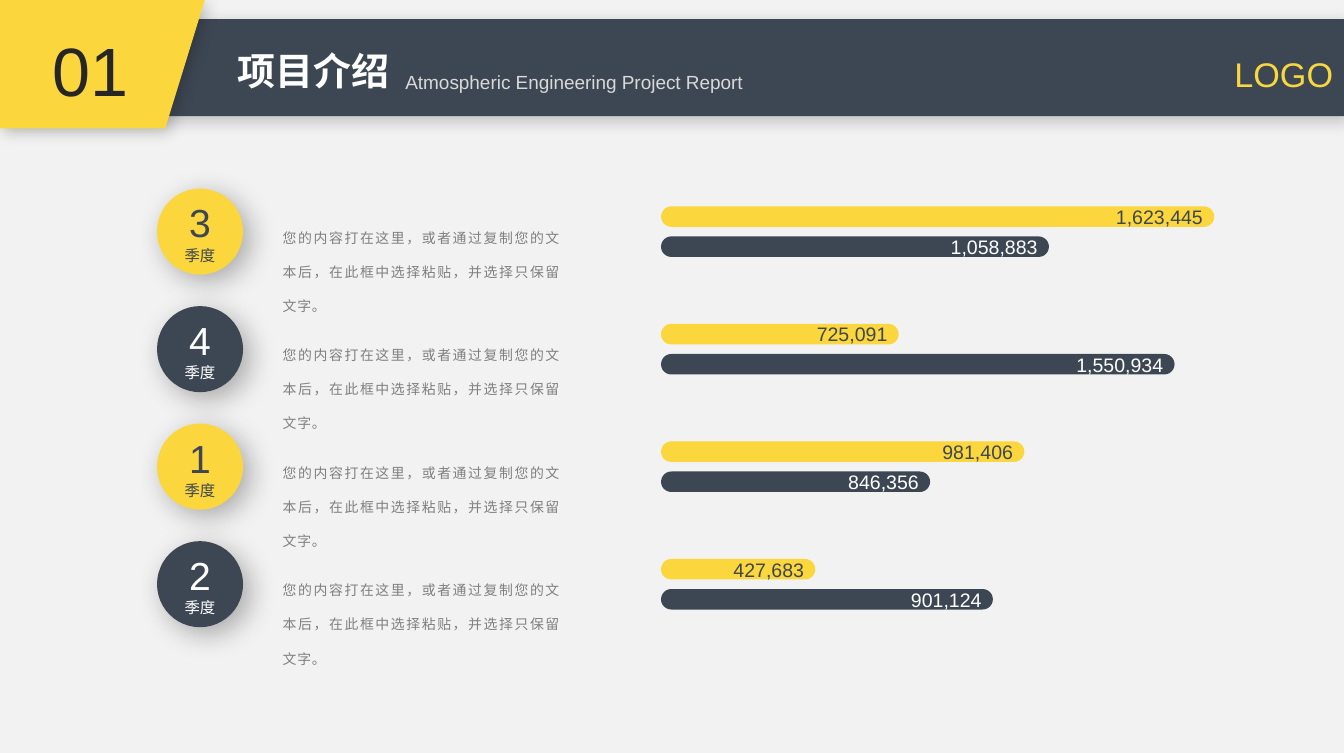
"""Build the quarterly project introduction slide."""
from dataclasses import dataclass

from lxml import etree
from pptx import Presentation
from pptx.dml.color import RGBColor
from pptx.enum import shapes, text
from pptx.oxml.ns import qn
from pptx.util import Inches, Pt

BODY = "您的内容打在这里，或者通过复制您的文本后，在此框中选择粘贴，并选择只保留文字。"
LEFT, CENTER, RIGHT, JUSTIFY = (text.PP_ALIGN.LEFT, text.PP_ALIGN.CENTER,
                                text.PP_ALIGN.RIGHT, text.PP_ALIGN.JUSTIFY)


@dataclass(frozen=True)
class Theme:
    font: str = "Arial"
    page: str = "F2F2F2"
    dark: str = "3D4753"
    yellow: str = "FBD63C"
    logo: str = "F9D740"
    white: str = "FFFFFF"
    subtitle: str = "D9D9D9"
    section: str = "262626"
    body: str = "808080"
    section_size: float = 36
    digit_size: float = 20.6
    title_size: float = 20
    logo_size: float = 18
    value_size: float = 10.3
    subtitle_size: float = 10
    unit_size: float = 8.1
    body_size: float = 7.3


@dataclass(frozen=True)
class Bar:
    value: int
    width: float


@dataclass(frozen=True)
class Quarter:
    number: int
    upper: Bar
    lower: Bar


@dataclass(frozen=True)
class Shadow:
    alpha: int
    blur: float
    distance: float


T = Theme()
HEADER_SHADOW = Shadow(20, 8, 3)
CIRCLE_SHADOW = Shadow(30, 15, 5)
QUARTERS = (
    Quarter(3, Bar(1623445, 4.05), Bar(1058883, 2.84)),
    Quarter(4, Bar(725091, 1.74), Bar(1550934, 3.76)),
    Quarter(1, Bar(981406, 2.66), Bar(846356, 1.97)),
    Quarter(2, Bar(427683, 1.13), Bar(901124, 2.43)),
)
ROW_TOP, ROW_STEP = 1.38, 0.86


def paint(sp, color: str, shadow: Shadow | None = None) -> None:
    """Give a shape a plain fill, no outline and an optional shadow."""
    sp.fill.solid()
    sp.fill.fore_color.rgb = RGBColor.from_string(color)
    sp.line.fill.background()
    sp.shadow.inherit = False
    if shadow:
        effects = sp._element.spPr.find(qn("a:effectLst"))
        outer = etree.SubElement(effects, qn("a:outerShdw"), blurRad=str(Pt(shadow.blur)),
                                 dist=str(Pt(shadow.distance)), dir=str(45 * 60000),
                                 algn="tl", rotWithShape="0")
        black = etree.SubElement(outer, qn("a:srgbClr"), val="000000")
        etree.SubElement(black, qn("a:alpha"), val=str(shadow.alpha * 1000))


def write(p, words: str, size: float, color: str, align=LEFT, bold: bool = False) -> None:
    """Fill a paragraph with evenly formatted words."""
    p.text = words
    p.alignment = align
    p.font.name, p.font.size, p.font.bold = T.font, Pt(size), bold
    p.font.color.rgb = RGBColor.from_string(color)


def add_label(s, box: tuple, words: str, size: float, color: str,
              align=LEFT, wrap: bool = False):
    """Add a one-paragraph text box and return its frame."""
    tf = s.shapes.add_textbox(*map(Inches, box)).text_frame
    tf.word_wrap = wrap
    write(tf.paragraphs[0], words, size, color, align)
    return tf


def add_header(s) -> None:
    """Draw the header band, section tab, title and labels."""
    band = s.shapes.add_shape(shapes.MSO_SHAPE.RECTANGLE, 0, Inches(0.14),
                              Inches(9.84), Inches(0.71))
    paint(band, T.dark, HEADER_SHADOW)
    outline = s.shapes.build_freeform(0, 0)
    corners = ((1.5, 0), (1.21, 0.94), (0, 0.94))
    outline.add_line_segments([(Inches(x), Inches(y)) for x, y in corners], close=True)
    paint(outline.convert_to_shape(), T.yellow, HEADER_SHADOW)

    title = s.shapes.title
    s.shapes._spTree.append(title._element)
    title.left, title.top, title.width, title.height = map(Inches, (1.64, 0.3, 1.32, 0.44))
    tf = title.text_frame
    tf.word_wrap = False
    tf.auto_size = text.MSO_AUTO_SIZE.NONE
    tf.vertical_anchor = text.MSO_ANCHOR.TOP
    write(tf.paragraphs[0], "项目介绍", T.title_size, T.white, bold=True)

    add_label(s, (2.87, 0.47, 2.76, 0.28), "Atmospheric Engineering Project Report",
              T.subtitle_size, T.subtitle, wrap=True)
    add_label(s, (0.28, 0.16, 0.76, 0.71), "01", T.section_size, T.section, CENTER)
    add_label(s, (8.94, 0.34, 0.93, 0.4), "LOGO", T.logo_size, T.logo)


def add_bar(group, bar: Bar, top: float, fill: str, ink: str) -> None:
    """Draw a rounded bar with its value at the right end."""
    sp = group.shapes.add_shape(shapes.MSO_SHAPE.ROUNDED_RECTANGLE, Inches(4.84),
                                Inches(top), Inches(bar.width), Inches(0.15))
    sp.adjustments[0] = 0.5
    paint(sp, fill)
    tf = sp.text_frame
    tf.margin_left, tf.margin_right = 0, Inches(0.06)
    tf.vertical_anchor = text.MSO_ANCHOR.MIDDLE
    write(tf.paragraphs[0], f"{bar.value:,}", T.value_size, ink, RIGHT)


def add_quarter(s, quarter: Quarter, top: float, fill: str, ink: str) -> None:
    """Draw one quarter's circle, description and pair of bars."""
    circle = s.shapes.add_shape(shapes.MSO_SHAPE.OVAL, Inches(1.15), Inches(top),
                                Inches(0.63), Inches(0.63))
    paint(circle, fill, CIRCLE_SHADOW)
    tf = circle.text_frame
    tf.vertical_anchor = text.MSO_ANCHOR.MIDDLE
    write(tf.paragraphs[0], str(quarter.number), T.digit_size, ink, CENTER)
    write(tf.add_paragraph(), "季度", T.unit_size, ink, CENTER)

    tf = add_label(s, (2.07, top + 0.17, 2.03, 0.47), BODY, T.body_size, T.body, JUSTIFY, True)
    tf.margin_left = tf.margin_top = tf.margin_right = tf.margin_bottom = 0
    p = tf.paragraphs[0]
    p.line_spacing, p.space_before = Pt(18), Pt(12)
    p.runs[0]._r.get_or_add_rPr().set("spc", "40")

    group = s.shapes.add_group_shape()
    add_bar(group, quarter.upper, top + 0.13, T.yellow, T.dark)
    add_bar(group, quarter.lower, top + 0.35, T.dark, T.white)


def main() -> None:
    """Create the slide and save it."""
    prs = Presentation()
    prs.slide_width, prs.slide_height = Inches(9.84), Inches(5.51)
    s = prs.slides.add_slide(prs.slide_layouts[5])
    s.background.fill.solid()
    s.background.fill.fore_color.rgb = RGBColor.from_string(T.page)
    add_header(s)
    for i, quarter in enumerate(QUARTERS):
        fill, ink = ((T.yellow, T.dark), (T.dark, T.white))[i % 2]
        add_quarter(s, quarter, ROW_TOP + i * ROW_STEP, fill, ink)
    prs.save("out.pptx")


if __name__ == "__main__":
    main()
